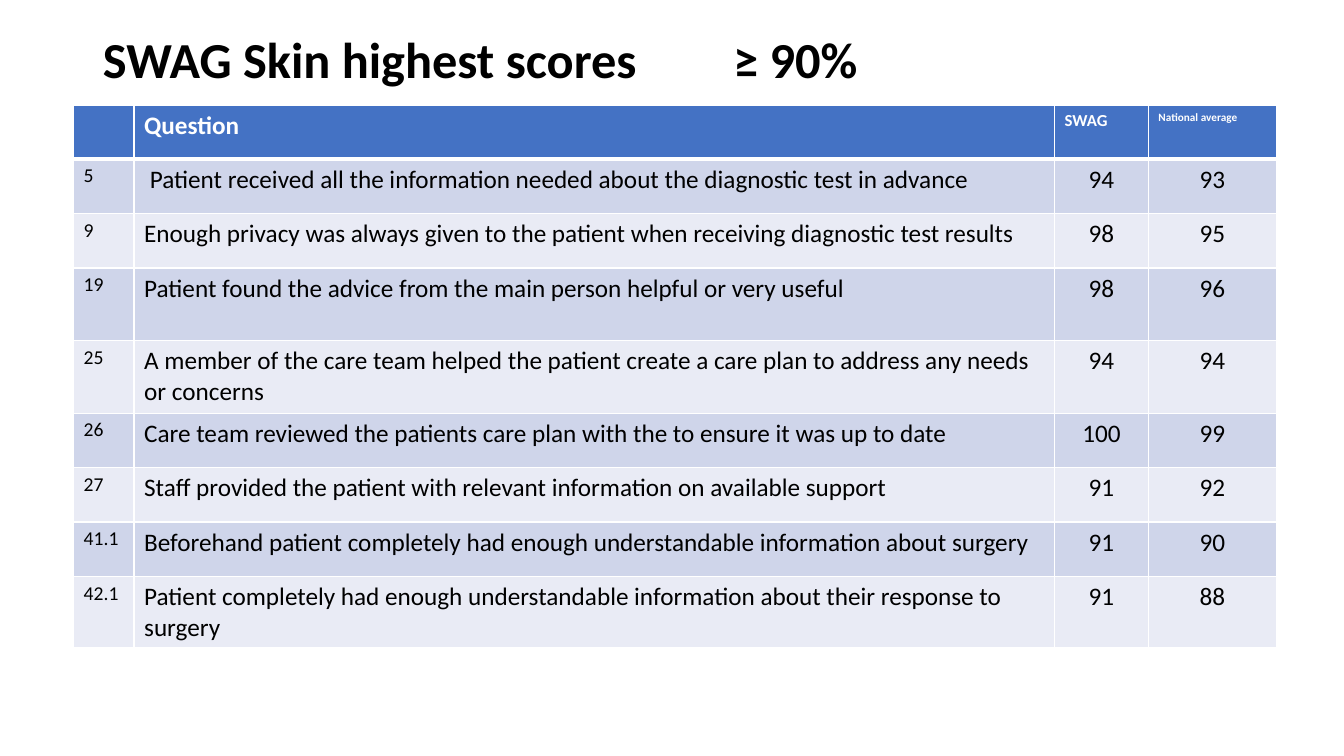
import pptx
import pptx.util
import pptx.dml.color
import pptx.enum.text
import pptx.oxml
import pptx.oxml.ns

Inches = pptx.util.Inches
Align = pptx.enum.text.PP_ALIGN
NS = pptx.oxml.ns.nsdecls("a")

HEADINGS = [("", 18), ("Question", 18), ("SWAG", 12), ("National average", 8)]
SCORES = [
    ("5", " Patient received all the information needed about the diagnostic test in advance", 94, 93),
    ("9", "Enough privacy was always given to the patient when receiving diagnostic test results", 98, 95),
    ("19", "Patient found the advice from the main person helpful or very useful", 98, 96),
    ("25", "A member of the care team helped the patient create a care plan to address any needs or concerns", 94, 94),
    ("26", "Care team reviewed the patients care plan with the to ensure it was up to date", 100, 99),
    ("27", "Staff provided the patient with relevant information on available support", 91, 92),
    ("41.1", "Beforehand patient completely had enough understandable information about surgery", 91, 90),
    ("42.1", "Patient completely had enough understandable information about their response to surgery", 91, 88),
]
COLUMN_WIDTHS = [0.6, 9.13, 0.93, 1.27]
ROW_HEIGHTS = [0.53, 0.54, 0.54, 0.72, 0.72, 0.54, 0.54, 0.54, 0.54]
SCORE_FORMATS = [(14, Align.LEFT), (18, Align.LEFT), (18, Align.CENTER), (18, Align.CENTER)]


def colour(value):
    return pptx.dml.color.RGBColor.from_string(value)


def write(frame, text, size=18, color="000000", bold=False, align=Align.LEFT):
    paragraph = frame.paragraphs[0]
    paragraph.alignment = align
    font = paragraph.font
    if text:
        run = paragraph.add_run()
        run.text = text
        font = run.font
    font.name = "Calibri"
    font.size = pptx.util.Pt(size)
    font.bold = bold
    font.color.rgb = colour(color)
    return paragraph


class ScoreSlide:
    heading_fill = "4472C4"
    band_fills = ["CFD5EA", "E9EBF5"]
    rule = "FFFFFF"

    def __init__(self, deck):
        self.slide = deck.slides.add_slide(deck.slide_layouts[5])

    def title(self, text, left, top, width, height, tab_stop):
        heading = self.slide.shapes.title
        heading.left, heading.top = Inches(left), Inches(top)
        heading.width, heading.height = Inches(width), Inches(height)
        frame = heading.text_frame
        frame.word_wrap = True
        frame.auto_size = pptx.enum.text.MSO_AUTO_SIZE.NONE
        frame.vertical_anchor = pptx.enum.text.MSO_ANCHOR.MIDDLE
        paragraph = write(frame, text, size=36, bold=True)
        paragraph.line_spacing = 0.9
        paragraph._p.get_or_add_pPr().append(pptx.oxml.parse_xml(
            f'<a:tabLst {NS}><a:tab pos="{Inches(tab_stop)}" algn="l"/></a:tabLst>'))

    def cell(self, cell, text, fill, bottom=1, **text_format):
        properties = cell._tc.get_or_add_tcPr()
        for side, points in (("L", 1), ("R", 1), ("T", 1), ("B", bottom)):
            properties.append(pptx.oxml.parse_xml(
                f'<a:ln{side} {NS} w="{pptx.util.Pt(points)}"><a:solidFill>'
                f'<a:srgbClr val="{self.rule}"/></a:solidFill></a:ln{side}>'))
        cell.fill.solid()
        cell.fill.fore_color.rgb = colour(fill)
        write(cell.text_frame, text, **text_format)

    def score_table(self, left, top):
        table = self.slide.shapes.add_table(
            len(ROW_HEIGHTS), len(COLUMN_WIDTHS), Inches(left), Inches(top),
            Inches(sum(COLUMN_WIDTHS)), Inches(sum(ROW_HEIGHTS))).table
        for column, width in zip(table.columns, COLUMN_WIDTHS):
            column.width = Inches(width)
        for row, height in zip(table.rows, ROW_HEIGHTS):
            row.height = Inches(height)
        for column, (heading, size) in enumerate(HEADINGS):
            self.cell(table.cell(0, column), heading, self.heading_fill,
                      bottom=3, size=size, color="FFFFFF", bold=True)
        for row, score in enumerate(SCORES, 1):
            for column, (value, (size, align)) in enumerate(zip(score, SCORE_FORMATS)):
                self.cell(table.cell(row, column), str(value),
                          self.band_fills[(row - 1) % 2], size=size, align=align)


def main():
    deck = pptx.Presentation()
    deck.slide_width, deck.slide_height = Inches(13.33), Inches(7.5)
    highest_scores = ScoreSlide(deck)
    highest_scores.title("SWAG Skin highest scores\t≥ 90%", 0.92, 0.22, 11.29, 0.79, 6.25)
    highest_scores.score_table(0.73, 1.05)
    deck.save("out.pptx")


if __name__ == "__main__":
    main()
